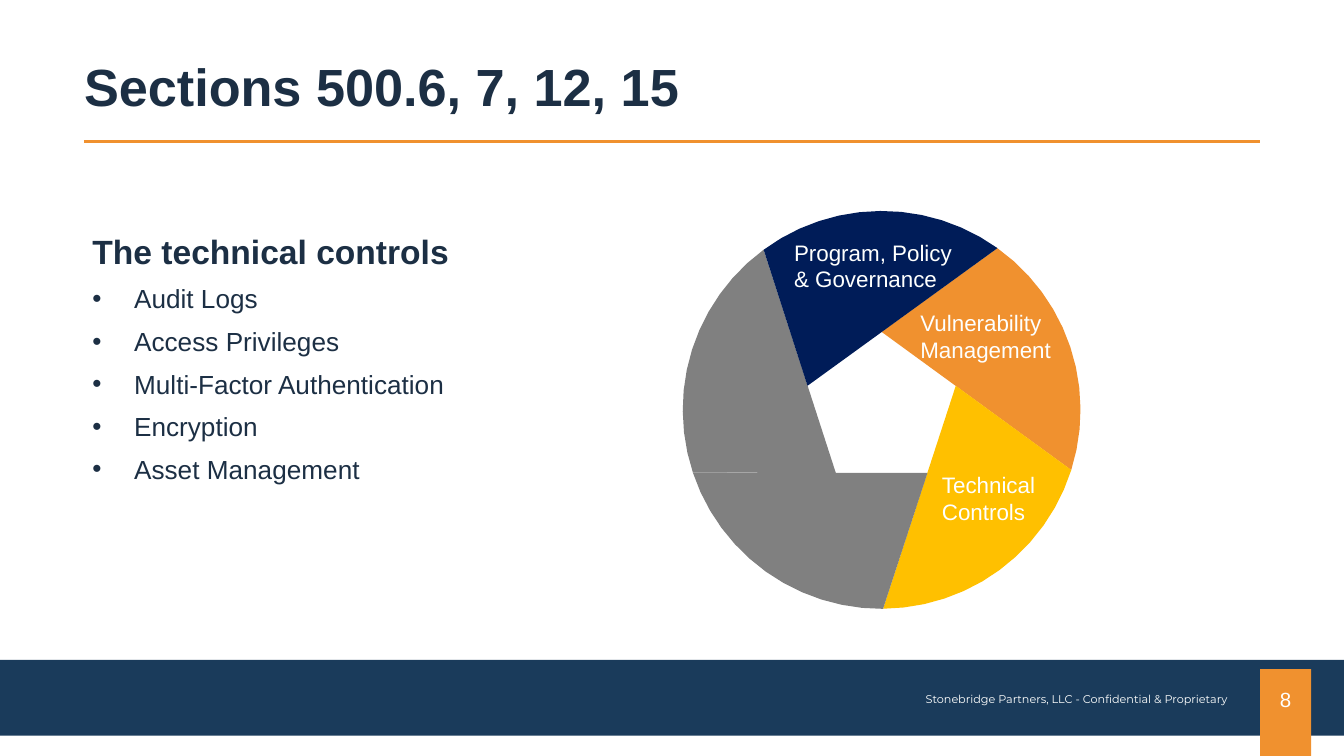
"""Build the slide on the technical controls, with a five-blade wheel."""
from dataclasses import dataclass
from math import cos, radians, sin
from typing import Any

from lxml.etree import SubElement
from pptx import Presentation
from pptx.dml.color import RGBColor
from pptx.enum.shapes import MSO_CONNECTOR, MSO_SHAPE
from pptx.enum.text import MSO_ANCHOR, MSO_AUTO_SIZE, PP_ALIGN
from pptx.oxml.ns import qn
from pptx.util import Inches, Pt

NAVY = RGBColor(0x00, 0x1C, 0x58)
BLUE = RGBColor(0x1A, 0x3B, 0x5B)
INK = RGBColor(0x1C, 0x2F, 0x44)
ORANGE = RGBColor(0xF0, 0x91, 0x2F)
YELLOW = RGBColor(0xFF, 0xC0, 0x00)
GRAY = RGBColor(0x80, 0x80, 0x80)
WHITE = RGBColor(0xFF, 0xFF, 0xFF)
OFF_WHITE = RGBColor(0xFE, 0xFF, 0xFE)

SLIDE_WIDTH = Inches(10)
SLIDE_HEIGHT = Inches(5.625)

WHEEL_CENTER = (Inches(6.56), Inches(3.05))
WHEEL_RADIUS = Inches(1.48)
HUB_RADIUS = Inches(0.58)
BLADE_ANGLE = 72
RIM_START = -54.4
HUB_START = -90
ARC_STEPS = 12
BLADE_COLORS = (ORANGE, YELLOW, GRAY, GRAY, NAVY)

HEADING = "The technical controls"
CONTROLS = (
    "Audit Logs",
    "Access Privileges",
    "Multi-Factor Authentication",
    "Encryption",
    "Asset Management",
)


@dataclass(frozen=True)
class Area:
    """Place on the slide, in percent of its width and height."""

    left: float
    top: float
    width: float
    height: float

    def box(self) -> tuple[int, int, int, int]:
        """Return left, top, width and height as lengths."""
        return (
            int(SLIDE_WIDTH * self.left / 100),
            int(SLIDE_HEIGHT * self.top / 100),
            int(SLIDE_WIDTH * self.width / 100),
            int(SLIDE_HEIGHT * self.height / 100),
        )


@dataclass(frozen=True)
class Label:
    """Text on a wheel blade."""

    area: Area
    lines: tuple[str, ...]


LABELS = (
    Label(Area(58.1, 30.7, 14.7, 8.9), ("Program, Policy & Governance",)),
    Label(Area(67.5, 40, 14.7, 8.9), ("Vulnerability Management",)),
    Label(Area(69.1, 61.5, 12.2, 8.9), ("Technical", "Controls")),
)


def apply(target: Any, values: dict[str, Any]) -> None:
    """Set each named attribute of the target."""
    for name, value in values.items():
        setattr(target, name, value)


def format_text(paragraph: Any, size: float, color: RGBColor, bold: bool = False, font: str = "Arial") -> None:
    """Set the font of a paragraph."""
    apply(paragraph.font, {"name": font, "size": Pt(size), "bold": bold})
    paragraph.font.color.rgb = color


def paint(shape: Any, color: RGBColor) -> None:
    """Fill a shape flat, without line or shadow."""
    shape.fill.solid()
    shape.fill.fore_color.rgb = color
    shape.line.fill.background()
    shape.shadow.inherit = False


def add_block(slide: Any, area: Area, color: RGBColor) -> Any:
    """Add a plain rectangle."""
    shape = slide.shapes.add_shape(MSO_SHAPE.RECTANGLE, *area.box())
    paint(shape, color)
    return shape


def add_text(slide: Any, area: Area, lines: tuple[str, ...], **frame_values: Any) -> Any:
    """Add a text box with one paragraph for each line."""
    frame = slide.shapes.add_textbox(*area.box()).text_frame
    frame.text = "\n".join(lines)
    apply(frame, {"word_wrap": True, "auto_size": MSO_AUTO_SIZE.SHAPE_TO_FIT_TEXT, **frame_values})
    return frame


def add_bullet(paragraph: Any) -> None:
    """Give a paragraph a hanging bullet."""
    properties = paragraph._p.get_or_add_pPr()
    properties.set("marL", str(Inches(0.31)))
    properties.set("indent", str(-Inches(0.31)))
    SubElement(properties, qn("a:buFont"), typeface="Arial")
    SubElement(properties, qn("a:buChar"), char="•")


def wheel_point(angle: float, radius: float) -> tuple[int, int]:
    """Return the point at an angle, clockwise from the right."""
    x, y = WHEEL_CENTER
    return round(x + radius * cos(radians(angle))), round(y + radius * sin(radians(angle)))


def add_blade(slide: Any, index: int, color: RGBColor) -> None:
    """Add a blade made of a rim arc and one corner of the hub."""
    start = RIM_START + index * BLADE_ANGLE
    corner = wheel_point(HUB_START + index * BLADE_ANGLE, HUB_RADIUS)
    arc = [
        wheel_point(start + BLADE_ANGLE * step / ARC_STEPS, WHEEL_RADIUS)
        for step in range(ARC_STEPS + 1)
    ]
    builder = slide.shapes.build_freeform(*corner)
    builder.add_line_segments(arc, close=True)
    paint(builder.convert_to_shape(), color)


def add_title(slide: Any) -> None:
    """Fill the title placeholder and rule a line below it."""
    title = slide.shapes.title
    apply(title, dict(zip(("left", "top", "width", "height"), Area(6.25, 7.8, 87.5, 7.8).box())))
    frame = title.text_frame
    frame.text = "Sections 500.6, 7, 12, 15"
    apply(frame, {
        "margin_left": 0, "margin_top": 0, "margin_right": 0, "margin_bottom": 0,
        "vertical_anchor": MSO_ANCHOR.BOTTOM, "auto_size": MSO_AUTO_SIZE.NONE,
    })
    paragraph = frame.paragraphs[0]
    apply(paragraph, {"alignment": PP_ALIGN.LEFT, "line_spacing": 0.9})
    format_text(paragraph, 28, INK, bold=True)

    left, top, width, _ = Area(6.25, 18.7, 87.5, 0).box()
    rule = slide.shapes.add_connector(MSO_CONNECTOR.STRAIGHT, left, top, left + width, top)
    rule.line.color.rgb = ORANGE
    rule.line.width = Pt(1.5)
    SubElement(rule._element.spPr, qn("a:effectLst"))


def add_footer(slide: Any) -> None:
    """Add the bottom bar, the page number and the notice."""
    add_block(slide, Area(0, 87.3, 100, 10), BLUE)
    frame = add_block(slide, Area(93.75, 88.5, 3.8, 11.5), ORANGE).text_frame
    frame.text = "8"
    apply(frame, {
        "margin_left": 0, "margin_top": 0, "margin_right": 0, "margin_bottom": Inches(0.2),
        "vertical_anchor": MSO_ANCHOR.MIDDLE, "word_wrap": False,
    })
    frame.paragraphs[0].alignment = PP_ALIGN.CENTER
    format_text(frame.paragraphs[0], 11, WHITE)

    notice = add_text(
        slide, Area(67.8, 90.7, 24.5, 3.5),
        ("Stonebridge Partners, LLC - Confidential & Proprietary",),
        word_wrap=False, vertical_anchor=MSO_ANCHOR.MIDDLE,
    ).paragraphs[0]
    notice.alignment = PP_ALIGN.RIGHT
    format_text(notice, 6, OFF_WHITE, font="Montserrat")


def add_controls(slide: Any) -> None:
    """Add the heading and the bulleted controls."""
    frame = add_text(
        slide, Area(5.9, 29.55, 41.3, 35.6), (HEADING, *CONTROLS),
        vertical_anchor=MSO_ANCHOR.MIDDLE,
    )
    heading, *items = frame.paragraphs
    heading.space_after = Pt(6)
    format_text(heading, 18, INK, bold=True)
    for item in items:
        item.space_after = Pt(6)
        add_bullet(item)
        format_text(item, 14, INK)


def add_wheel(slide: Any) -> None:
    """Add the blades and their labels."""
    for index, color in enumerate(BLADE_COLORS):
        add_blade(slide, index, color)
    for label in LABELS:
        for paragraph in add_text(slide, label.area, label.lines).paragraphs:
            format_text(paragraph, 12, OFF_WHITE)


def main() -> None:
    """Build and save the presentation."""
    presentation = Presentation()
    apply(presentation, {"slide_width": SLIDE_WIDTH, "slide_height": SLIDE_HEIGHT})
    slide = presentation.slides.add_slide(presentation.slide_layouts[5])
    for add_part in (add_footer, add_title, add_controls, add_wheel):
        add_part(slide)
    presentation.save("out.pptx")


if __name__ == "__main__":
    main()
